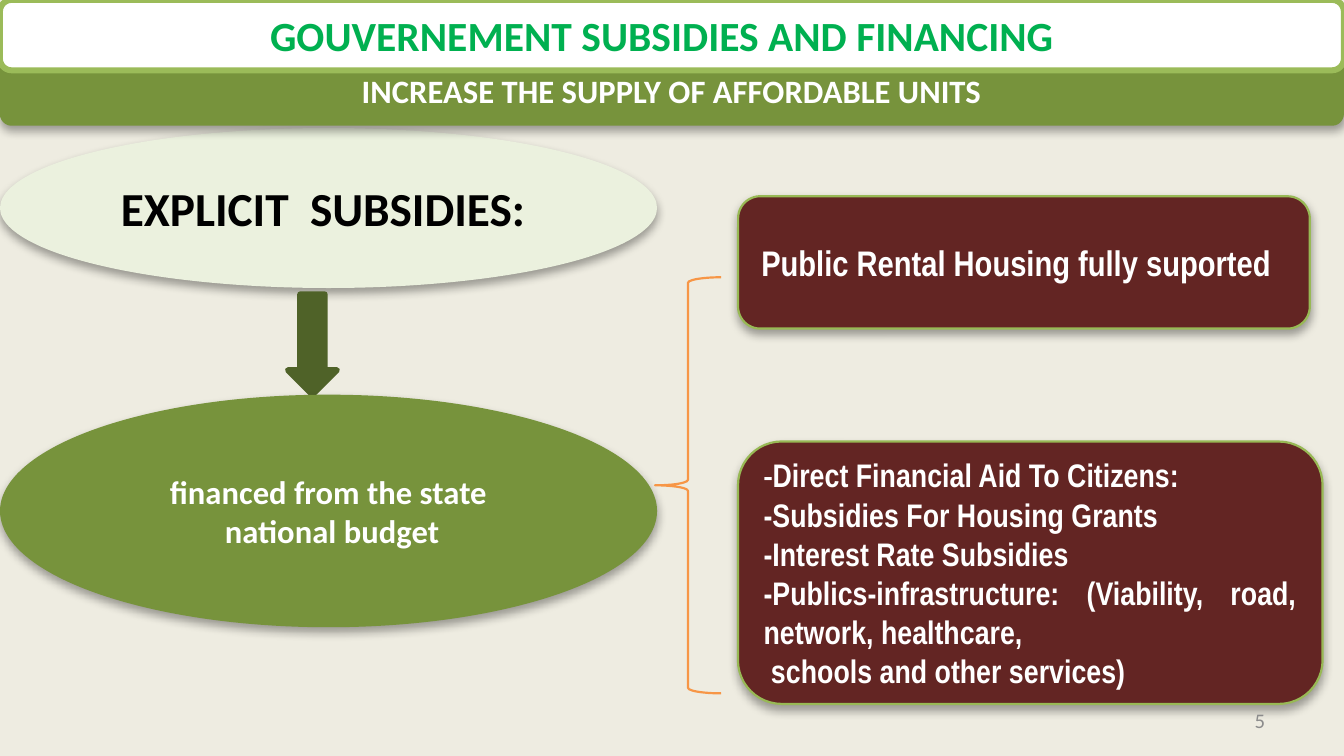
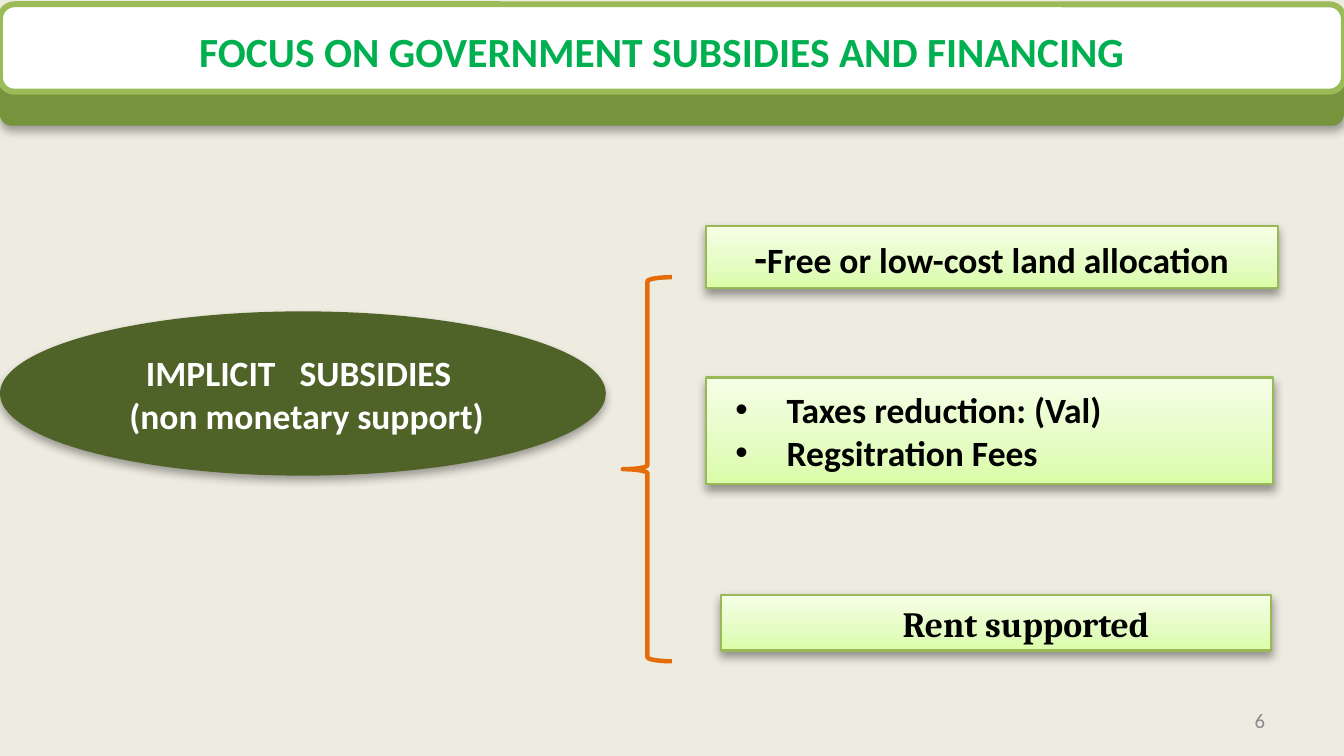
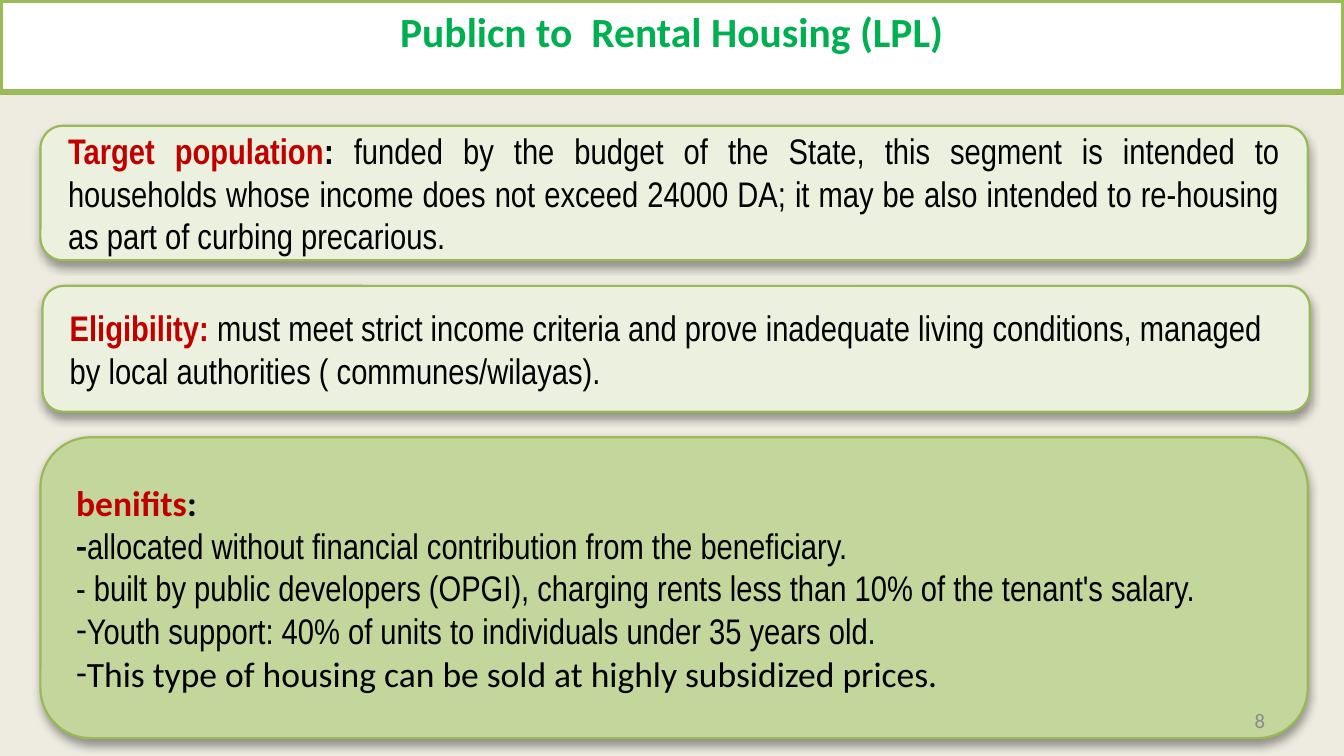
"""Build three slides on government housing subsidies."""
import dataclasses

import lxml.etree
import pptx
import pptx.dml.color
import pptx.enum.shapes
import pptx.enum.text
import pptx.oxml.ns
import pptx.util

Inches = pptx.util.Inches
Pt = pptx.util.Pt
SHAPE = pptx.enum.shapes.MSO_SHAPE
ALIGN = pptx.enum.text.PP_ALIGN
ANCHOR = pptx.enum.text.MSO_ANCHOR
qn = pptx.oxml.ns.qn


@dataclasses.dataclass(frozen=True)
class Text:
    size: float
    font: str
    colour: str
    bold: bool = True


@dataclasses.dataclass(frozen=True)
class Style:
    shape: SHAPE
    fill: object = None
    line: str = ""
    width: float = 0.75
    shadow: int = 0
    inset: tuple = (0.06, 0.03)
    anchor: ANCHOR = ANCHOR.MIDDLE
    align: ALIGN = ALIGN.CENTER


class Theme:
    width = 6.3
    height = width * 9 / 16
    background = "EEECE1"
    white, black, red = "FFFFFF", "000000", "C00000"
    olive, dark_olive, pale, edge = "77933C", "4F6228", "EBF1DE", "98B955"
    maroon = "632523"
    fresh = ((0, "DAFDA7"), (35, "E4FCC2"), (100, "F5FFE7"))
    blur, distance = 3.1, 1.7
    bullet_fonts = {"•": "Arial", "-": "Calibri"}
    text = {
        "title": Text(14, "Calibri", "00B050"),
        "heading": Text(16, "Calibri", black),
        "band": Text(11, "Calibri", white),
        "oval": Text(12, "Calibri", white),
        "dash": Text(10, "Calibri", white),
        "aid": Text(11, "Arial Narrow", white),
        "housing": Text(12, "Arial Narrow", white),
        "item": Text(12, "Calibri", black),
        "big dash": Text(14, "Calibri", black),
        "serif": Text(12, "Cambria", black),
        "label": Text(12, "Arial Narrow", red),
        "colon": Text(12, "Arial Narrow", black),
        "body": Text(12, "Arial Narrow", black, False),
        "wide label": Text(12, "Calibri", red),
        "wide body": Text(12, "Calibri", black, False),
        "number": Text(7, "Calibri", "8C8C8C", False),
    }
    pale_oval = Style(SHAPE.OVAL, pale, shadow=35)
    olive_oval = Style(SHAPE.OVAL, olive, shadow=35)
    dark_oval = Style(SHAPE.OVAL, dark_olive, shadow=35)
    band = Style(SHAPE.ROUNDED_RECTANGLE, olive, shadow=35)
    title = Style(SHAPE.ROUNDED_RECTANGLE, white, "9BBB59", 2, anchor=ANCHOR.TOP)
    square_title = dataclasses.replace(title, shape=SHAPE.RECTANGLE)
    arrow = Style(SHAPE.DOWN_ARROW, dark_olive, dark_olive, 2)
    thin_brace = Style(SHAPE.LEFT_BRACE, None, "F79646")
    thick_brace = Style(SHAPE.LEFT_BRACE, None, "E46C0A", 1.5)
    maroon_box = Style(SHAPE.ROUNDED_RECTANGLE, maroon, edge, shadow=35)
    maroon_list = dataclasses.replace(maroon_box, align=ALIGN.JUSTIFY)
    fresh_box = Style(SHAPE.RECTANGLE, fresh, edge, shadow=38, anchor=ANCHOR.TOP)
    fresh_list = dataclasses.replace(fresh_box, inset=(0.1, 0.05), align=ALIGN.LEFT)
    card = Style(SHAPE.ROUNDED_RECTANGLE, pale, edge, shadow=38,
                 inset=(0.1, 0.05), align=ALIGN.LEFT)
    justified_card = dataclasses.replace(card, align=ALIGN.JUSTIFY)
    green_card = dataclasses.replace(card, fill="C3D69B")


@dataclasses.dataclass(frozen=True)
class Line:
    spans: tuple
    bullet: str = ""
    left: float = 0
    first: float = 0


@dataclasses.dataclass(frozen=True)
class Part:
    style: Style
    at: tuple
    lines: tuple = ()
    extra_top: float = 0
    extra_right: float = 0


def line(role, text, **options):
    return Line(((text, role),), **options)


def band(*lines):
    return Part(Theme.band, (0, 0.26, Theme.width, 0.33), lines)


def title(text, top, height, style=Theme.title, **extra):
    return Part(style, (0, top, Theme.width, height), (line("title", text),), **extra)


PAGES = (
    (5, (
        Part(Theme.pale_oval, (0, 0.6, 3.08, 0.75),
             (line("heading", "EXPLICIT  SUBSIDIES:"),), extra_right=0.05),
        band(line("band", "INCREASE THE SUPPLY OF AFFORDABLE UNITS")),
        title("GOUVERNEMENT SUBSIDIES AND FINANCING", 0, 0.33, extra_right=0.09),
        Part(Theme.arrow, (1.35, 1.38, 0.23, 0.47)),
        Part(Theme.olive_oval, (0, 1.85, 3.08, 1.09),
             (line("band", "financed from the state"), line("band", " national budget"))),
        Part(Theme.maroon_list, (3.46, 2.07, 2.74, 1.23), (
            Line((("-", "dash"), ("Direct Financial Aid To Citizens:", "aid"))),
            line("aid", "-Subsidies For Housing Grants"),
            line("aid", "-Interest Rate Subsidies"),
            line("aid", "-Publics-infrastructure: (Viability, road, network, healthcare,"),
            line("aid", " schools and other services)"),
        )),
        Part(Theme.maroon_box, (3.46, 0.92, 2.68, 0.62),
             (line("housing", "Public Rental Housing fully suported"),), extra_right=0.07),
        Part(Theme.thin_brace, (3.07, 1.3, 0.31, 1.95)),
    )),
    (6, (
        Part(Theme.dark_oval, (0, 1.46, 2.84, 0.77),
             (line("oval", "IMPLICIT   SUBSIDIES "), line("oval", " (non monetary support)"))),
        band(),
        title("FOCUS ON GOVERNMENT SUBSIDIES AND FINANCING", 0.02, 0.41,
              extra_top=0.05, extra_right=0.09),
        Part(Theme.fresh_box, (3.31, 1.06, 2.68, 0.29),
             (Line((("-", "big dash"), ("Free or low-cost land allocation", "item"))),)),
        Part(Theme.fresh_box, (3.38, 2.79, 2.58, 0.26),
             (line("serif", "Rent supported", left=0.28),)),
        Part(Theme.fresh_list, (3.31, 1.77, 2.66, 0.5), tuple(
            line("item", text, bullet="•", left=0.28, first=-0.24)
            for text in ("Taxes reduction: (Val)", "Regsitration Fees"))),
        Part(Theme.thick_brace, (2.92, 1.3, 0.23, 1.8)),
    )),
    (8, (
        title("Publicn to  Rental Housing (LPL)", 0, 0.43, Theme.square_title),
        Part(Theme.justified_card, (0.19, 0.59, 5.94, 0.63), (Line((
            ("Target population", "label"), (": ", "colon"),
            ("funded by the budget of the State, this segment is intended to households "
             "whose income does not exceed 24000 DA; it may be also intended to re-housing "
             "as part of curbing precarious.", "body"))),)),
        Part(Theme.green_card, (0.19, 2.05, 5.94, 1.41), (
            Line((("benifits", "wide label"), (":", "item"))),
            Line((("-", "item"),
                  ("allocated without financial contribution from the beneficiary.", "body"))),
            line("body", "- built by public developers (OPGI), charging rents less than 10% "
                         "of the tenant's salary."),
            line("body", "Youth support: 40% of units to individuals under 35 years old.",
                 bullet="-"),
            line("wide body", "This type of housing can be sold at highly subsidized prices.",
                 bullet="-"),
        )),
        Part(Theme.card, (0.2, 1.34, 5.94, 0.59), (Line((
            ("Eligibility: ", "label"),
            ("must meet strict income criteria and prove inadequate living conditions, "
             "managed by local authorities ( communes/wilayas).", "body"))),)),
    )),
)


def rgb(colour):
    return pptx.dml.color.RGBColor.from_string(colour)


def add_element(parent, tag, **attributes):
    return lxml.etree.SubElement(
        parent, qn(tag), {name: str(value) for name, value in attributes.items()})


def add_colour(parent, colour):
    return add_element(parent, "a:srgbClr", val=colour)


def paint(shape, style):
    if style.fill is None:
        shape.fill.background()
    elif isinstance(style.fill, str):
        shape.fill.solid()
        shape.fill.fore_color.rgb = rgb(style.fill)
    else:
        shape.fill.gradient()
        shape.fill.gradient_angle = 90
        stops = shape._element.spPr.find(".//" + qn("a:gsLst"))
        for stop in list(stops):
            stops.remove(stop)
        for position, colour in style.fill:
            add_colour(add_element(stops, "a:gs", pos=position * 1000), colour)
    if style.line:
        shape.line.color.rgb = rgb(style.line)
        shape.line.width = Pt(style.width)
    else:
        shape.line.fill.background()
    shape.shadow.inherit = False
    if style.shadow:
        effects = shape._element.spPr.find(qn("a:effectLst"))
        shadow = add_element(effects, "a:outerShdw", blurRad=int(Pt(Theme.blur)),
                             dist=int(Pt(Theme.distance)), dir=5400000, rotWithShape=0)
        add_element(add_colour(shadow, Theme.black), "a:alpha", val=style.shadow * 1000)


def write(frame, lines, align, anchor, margins):
    frame.word_wrap = True
    frame.vertical_anchor = anchor
    (frame.margin_left, frame.margin_top,
     frame.margin_right, frame.margin_bottom) = map(Inches, margins)
    for index, entry in enumerate(lines):
        para = frame.add_paragraph() if index else frame.paragraphs[0]
        para.alignment = align
        properties = para._p.get_or_add_pPr()
        properties.set("marL", str(int(Inches(entry.left))))
        properties.set("indent", str(int(Inches(entry.first))))
        if entry.bullet:
            add_element(properties, "a:buFont", typeface=Theme.bullet_fonts[entry.bullet])
            add_element(properties, "a:buChar", char=entry.bullet)
        for text, role in entry.spans:
            look = Theme.text[role]
            span = para.add_run()
            span.text = text
            span.font.size = Pt(look.size)
            span.font.name = look.font
            span.font.bold = look.bold
            span.font.color.rgb = rgb(look.colour)


def add_part(page, part):
    style = part.style
    shape = page.shapes.add_shape(style.shape, *map(Inches, part.at))
    paint(shape, style)
    side, edge = style.inset
    if part.lines:
        write(shape.text_frame, part.lines, style.align, style.anchor,
              (side, edge + part.extra_top, side + part.extra_right, edge))


def add_number(page, number):
    box = page.shapes.add_textbox(*map(Inches, (4.52, 3.28, 1.47, 0.19)))
    write(box.text_frame, (line("number", str(number)),), ALIGN.RIGHT, ANCHOR.MIDDLE,
          (0.06, 0.03, 0.06, 0.03))


def main():
    deck = pptx.Presentation()
    deck.slide_width, deck.slide_height = Inches(Theme.width), Inches(Theme.height)
    backdrop = deck.slide_master.background.fill
    backdrop.solid()
    backdrop.fore_color.rgb = rgb(Theme.background)
    for number, parts in PAGES:
        page = deck.slides.add_slide(deck.slide_layouts[6])
        for part in parts:
            add_part(page, part)
        add_number(page, number)
    deck.save("out.pptx")


if __name__ == "__main__":
    main()
